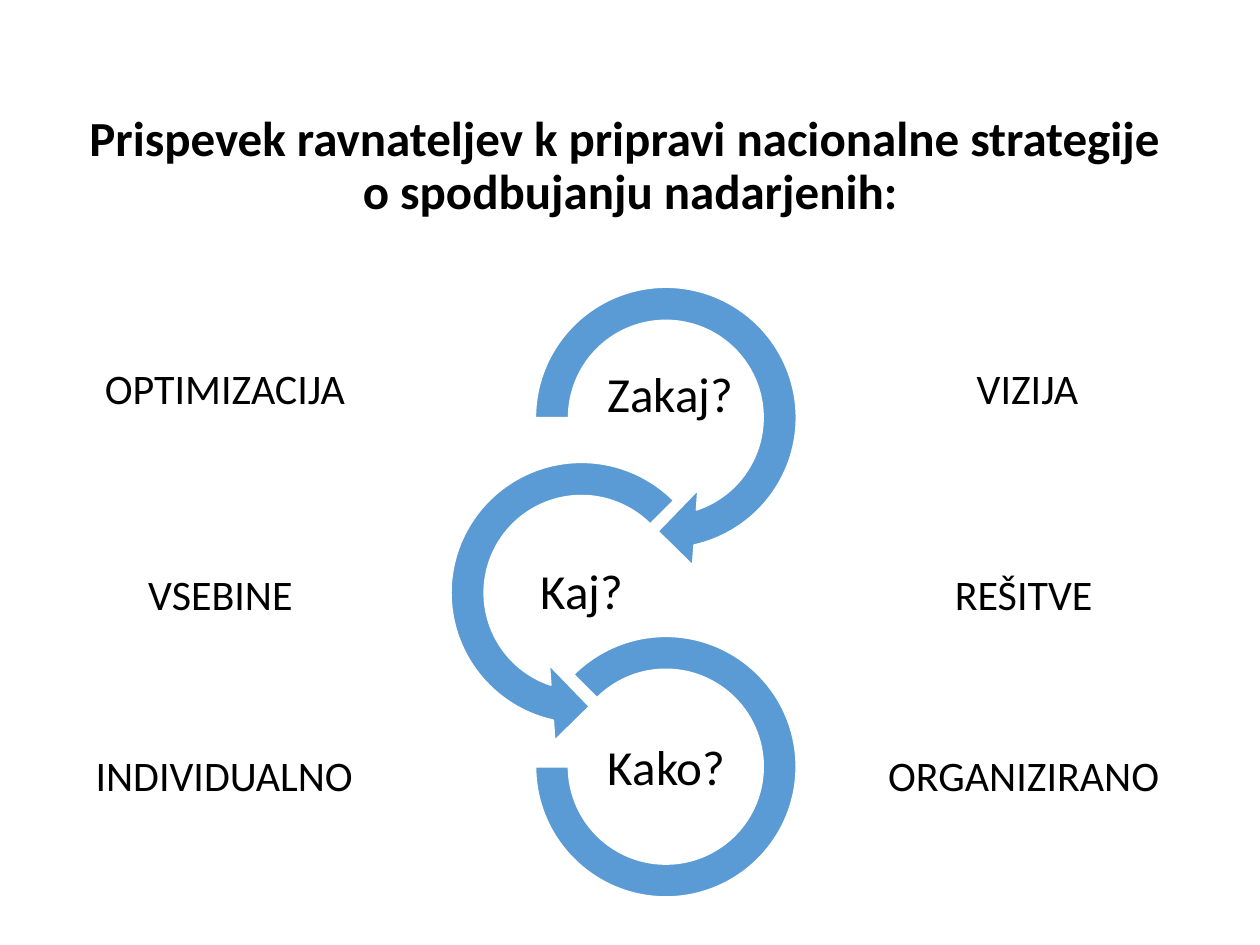
"""Build the slide on the principals' contribution to the gifted strategy."""
from pptx import Presentation
from pptx.dml.color import RGBColor
from pptx.enum.shapes import MSO_SHAPE as SHAPE
from pptx.enum.text import MSO_ANCHOR as ANCHOR, MSO_AUTO_SIZE as AUTO, PP_ALIGN as ALIGN
from pptx.util import Inches, Pt


def color(value):
    return RGBColor.from_string(value)


def add_text(shapes, box, lines, size, bold=False, spacing=None, inset=None):
    tf = shapes.add_textbox(*map(Inches, box)).text_frame
    tf.word_wrap = True
    if spacing:
        tf.vertical_anchor = ANCHOR.MIDDLE
    else:
        tf.auto_size = AUTO.SHAPE_TO_FIT_TEXT
    if inset is not None:
        tf.margin_left = tf.margin_right = tf.margin_top = tf.margin_bottom = Inches(inset)
    p = tf.paragraphs[0]
    p.alignment = ALIGN.CENTER
    p.line_spacing = spacing
    for i, line in enumerate(lines):
        if i:
            p.add_line_break()
        r = p.add_run()
        r.text = line
        r.font.name = "Calibri"
        r.font.size = Pt(size)
        r.font.bold = bold
        r.font.color.rgb = color("000000")


prs = Presentation()
prs.slide_width, prs.slide_height = Inches(10), Inches(7.5)
s = prs.slides.add_slide(prs.slide_layouts[6])

title = ["Prispevek ravnateljev k pripravi nacionalne strategije ", "o spodbujanju nadarjenih:"]
add_text(s.shapes, (0, 0.6, 10, 1.45), title, 28, True, 0.9)

steps = [
    ("Zakaj?", SHAPE.CIRCULAR_ARROW, 4.08, 2.11, 2.41, (0.11, 11.42, 45, 108, 0.125), 4.65, 2.81),
    ("Kaj?", SHAPE.LEFT_CIRCULAR_ARROW, 3.41, 3.5, 2.41, (0.11, 11.42, 63, 189, 0.125), 3.95, 4.38),
    ("Kako?", SHAPE.BLOCK_ARC, 4.25, 5.05, 2.07, (135, 108, 0.127), 4.62, 5.77),
]
group = s.shapes.add_group_shape()
for label, kind, left, top, side, adjustments, text_left, text_top in steps:
    sp = group.shapes.add_shape(kind, *map(Inches, (left, top, side, side)))
    for i, value in enumerate(adjustments):
        sp.adjustments[i] = value
    sp.shadow.inherit = False
    sp.fill.solid()
    sp.fill.fore_color.rgb = color("5B9BD5")
    sp.line.color.rgb = color("FFFFFF")
    sp.line.width = Pt(1)
    add_text(group.shapes, (text_left, text_top, 1.34, 0.67), [label], 28, spacing=0.9, inset=0.02)

rows = [
    (2.83, "OPTIMIZACIJA", 3.57, "VIZIJA", 3.69),
    (4.46, "VSEBINE", 3.5, "REŠITVE", 3.63),
    (5.9, "INDIVIDUALNO", 3.56, "ORGANIZIRANO", 3.63),
]
for top, left_word, left_width, right_word, right_width in rows:
    add_text(s.shapes, (0, top, left_width, 0.5), [left_word], 24)
    add_text(s.shapes, (6.31, top, right_width, 0.5), [right_word], 24)

prs.save("out.pptx")
